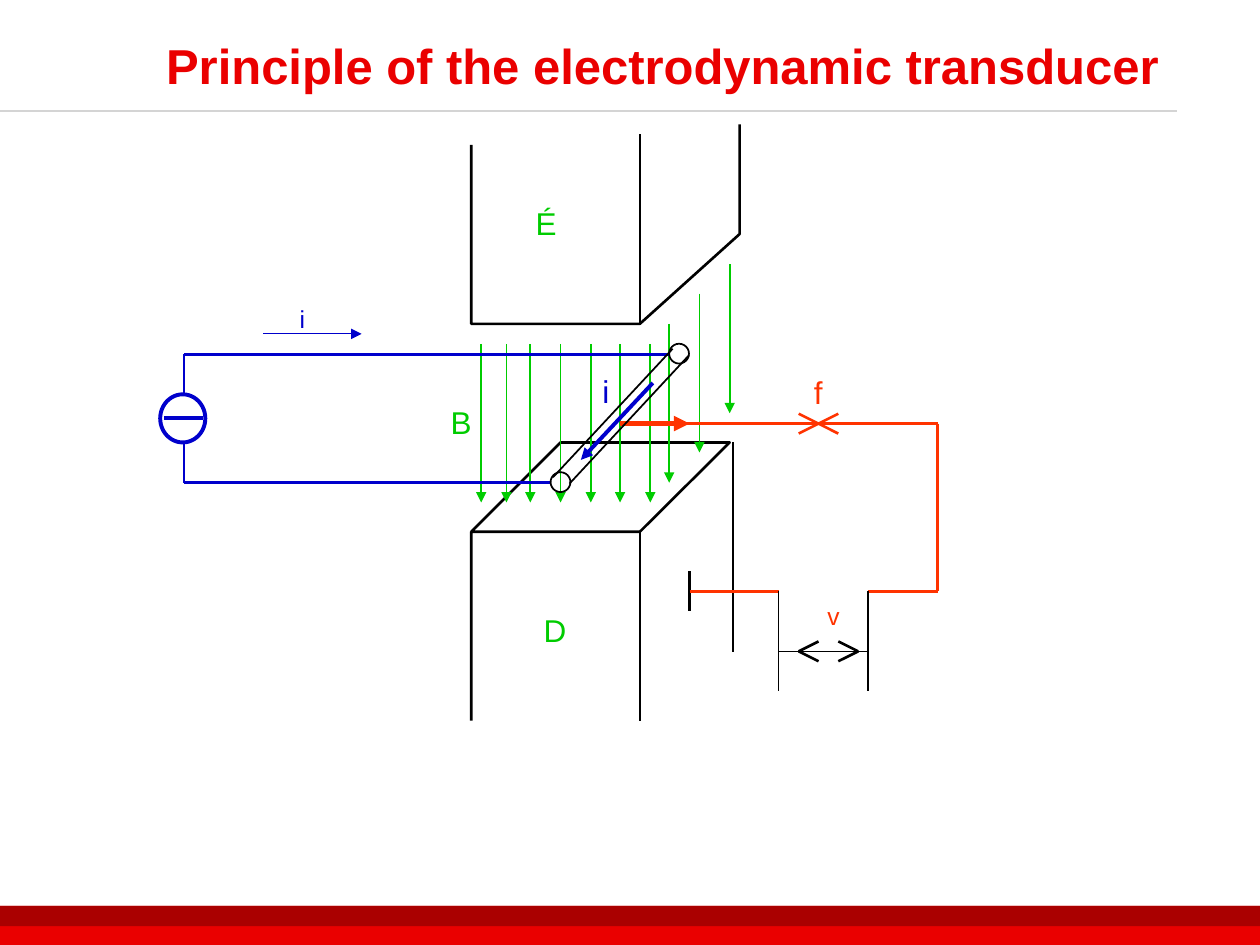
from dataclasses import dataclass
from typing import Any

from lxml import etree
from pptx import Presentation
from pptx.dml.color import RGBColor
from pptx.enum.shapes import MSO_CONNECTOR as Connector, MSO_SHAPE as Shape
from pptx.enum.text import MSO_ANCHOR as Anchor, PP_ALIGN as Align
from pptx.oxml.ns import qn
from pptx.util import Cm, Pt

BLACK, GREEN, BLUE, ORANGE = "000000", "00CC00", "0000CC", "FF3300"
RED, DARK_RED, GREY = "EA0000", "AA0000", "D4D4D4"


def color(value):
    return RGBColor.from_string(value)


@dataclass
class Box:
    """A region of the page; all lengths inside it are in cm from its corner."""
    page: Any
    left: float
    top: float

    def place(self, x, y):
        return Cm(self.left + x), Cm(self.top + y)

    def line(self, start, end, tone, width=1.5, arrow=False):
        line = self.page.shapes.add_connector(
            Connector.STRAIGHT, *self.place(*start), *self.place(*end))
        line.line.color.rgb = color(tone)
        line.line.width = Pt(width)
        if arrow:
            etree.SubElement(line.line._get_or_add_ln(), qn("a:tailEnd"), type="triangle")
        etree.SubElement(line._element.spPr, qn("a:effectLst"))

    def outline(self, points, tone, width=1.5):
        first, *rest = [self.place(*point) for point in points]
        builder = self.page.shapes.build_freeform(*first)
        builder.add_line_segments(rest, close=False)
        self.finish(builder.convert_to_shape(), tone, width)

    def circle(self, x, y, width, height, tone, weight):
        circle = self.page.shapes.add_shape(
            Shape.OVAL, *self.place(x, y), Cm(width), Cm(height))
        self.finish(circle, tone, weight)

    def finish(self, shape, tone, width):
        shape.shadow.inherit = False
        shape.fill.background()
        shape.line.color.rgb = color(tone)
        shape.line.width = Pt(width)

    def band(self, width, height, tone):
        band = self.page.shapes.add_shape(
            Shape.RECTANGLE, *self.place(0, 0), Cm(width), Cm(height))
        band.shadow.inherit = False
        band.fill.solid()
        band.fill.fore_color.rgb = color(tone)
        band.line.fill.background()

    def text(self, words, x, y, width, height, tone, size=18):
        frame = self.page.shapes.add_textbox(
            *self.place(x, y), Cm(width), Cm(height)).text_frame
        frame.word_wrap = True
        frame.margin_left = frame.margin_right = 0
        frame.margin_top = frame.margin_bottom = 0
        para = frame.paragraphs[0]
        para.text = words
        para.alignment = Align.CENTER
        para.font.name, para.font.size = "Arial", Pt(size)
        para.font.color.rgb = color(tone)
        return frame


def add_footer(box):
    box.band(25.4, 0.79, RED)
    box.band(25.4, 0.41, DARK_RED)


def add_title(box):
    box.line((0, 2.24), (23.72, 2.24), GREY)
    frame = box.text("Principle of the electrodynamic transducer",
                     3.1, 0.2, 22.2, 2.21, RED, 28)
    frame.vertical_anchor = Anchor.MIDDLE
    frame.margin_left = frame.margin_right = Cm(0.25)
    frame.paragraphs[0].alignment = Align.LEFT
    frame.paragraphs[0].font.bold = True


def add_upper_pole(box):
    box.outline([(0, 0.41), (0, 4.02), (3.4, 4.02), (5.41, 2.21), (5.41, 0)], BLACK)
    box.line((3.4, 4.02), (3.4, 0.2), BLACK)
    box.text("É", 0.81, 1.6, 1.4, 0.76, GREEN)


def add_lower_pole(box):
    box.outline([(0, 5.61), (0, 1.8), (3.4, 1.8), (5.21, 0), (1.8, 0), (0, 1.8)], BLACK)
    box.line((3.4, 1.8), (3.4, 5.61), BLACK)
    box.line((5.28, 0), (5.28, 4.22), BLACK)
    box.text("D", 0.99, 3.4, 1.4, 0.76, GREEN)


def add_field(box):
    # Front lines share one height, the rear ones climb with the pole edge
    front = [(x, 1.6, 4.8) for x in (0.81, 1.32, 1.8, 2.41, 3.02, 3.61, 4.22)]
    rear = [(4.6, 1.2, 4.4), (5.21, 0.59, 3.79), (5.82, 0, 3)]
    for x, top, bottom in front + rear:
        box.line((x, top), (x, bottom), GREEN, 1, arrow=True)
    box.text("B", 0, 2.8, 0.81, 0.76, GREEN)


def add_circuit(box):
    # Wires to both ends of the conductor
    for y, end, source_y in ((1.02, 10.26, 1.83), (3.61, 7.87, 2.8)):
        box.line((end, y), (0.48, y), BLUE)
        box.line((0.48, y), (0.48, source_y), BLUE)
    # Current source
    box.circle(0, 1.83, 0.91, 0.97, BLUE, 2.25)
    box.line((0.08, 2.31), (0.86, 2.31), BLUE, 2.25)
    # Current direction
    box.line((2.08, 0.61), (4.06, 0.61), BLUE, 0.75, arrow=True)
    box.text("i", 2.46, 0, 0.81, 0.58, BLUE, 14)


def add_mechanics(box):
    force_y, motion_y, gauge_y = 1.02, 4.4, 5.61
    # Rod from the conductor round to the fixed stop
    box.line((0.2, force_y), (6.4, force_y), ORANGE)
    box.line((1.4, motion_y - 0.4), (1.4, motion_y + 0.4), BLACK, 2.25)
    box.line((1.4, motion_y), (3.2, motion_y), ORANGE)
    box.line((6.4, force_y), (6.4, motion_y), ORANGE)
    box.line((5, motion_y), (6.4, motion_y), ORANGE)
    # Velocity gauge
    for x in (3.2, 5):
        box.line((x, motion_y), (x, 6.4), BLACK, 0.75)
    box.line((3.2, gauge_y), (5, gauge_y), BLACK, 0.75)
    for tip, back in ((3.6, 4), (4.8, 4.4)):
        for rise in (-0.2, 0.2):
            box.line((tip, gauge_y), (back, gauge_y + rise), BLACK)
    box.text("v", 3.81, 4.6, 0.99, 0.58, ORANGE, 14)
    # Force mark and force arrow
    for rise in (-0.2, 0.2):
        box.line((3.6, force_y + rise), (4.4, force_y - rise), ORANGE)
    box.text("f", 3.4, 0, 1.19, 0.76, ORANGE)
    box.line((0, force_y), (1.4, force_y), ORANGE, 3, arrow=True)


def add_conductor(box):
    for x, y in ((0, 2.59), (2.39, 0)):
        box.circle(x, y, 0.4, 0.4, BLACK, 1)
    for x, y in ((0.05, 2.69), (0.38, 2.82)):
        box.line((x, y), (x + 2.41, y - 2.59), BLACK, 1)
    box.line((2.06, 0.79), (0.61, 2.34), BLUE, 2.25, arrow=True)
    box.text("i", 0.81, 0.58, 0.61, 0.76, BLUE)


def main():
    deck = Presentation()
    deck.slide_width, deck.slide_height = Cm(25.4), Cm(19.05)
    page = deck.slides.add_slide(deck.slide_layouts[6])
    add_footer(Box(page, 0, 18.26))
    add_title(Box(page, 0, 0))
    add_upper_pole(Box(page, 9.5, 2.51))
    add_lower_pole(Box(page, 9.5, 8.92))
    add_field(Box(page, 8.89, 5.33))
    add_circuit(Box(page, 3.23, 6.12))
    add_mechanics(Box(page, 12.5, 7.52))
    add_conductor(Box(page, 11.1, 6.93))
    deck.save("out.pptx")


if __name__ == "__main__":
    main()
